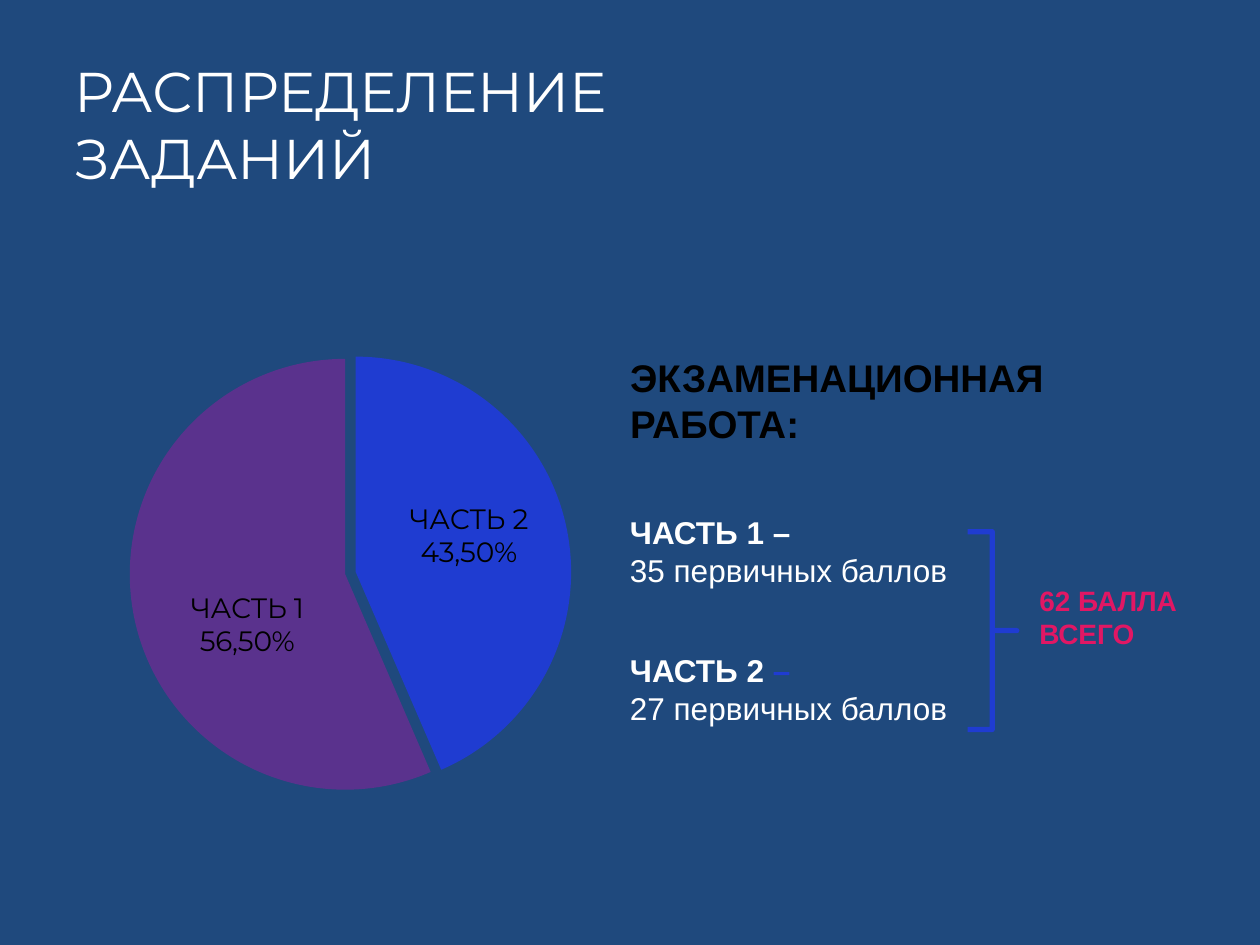
from pptx import Presentation
from pptx.chart.data import CategoryChartData
from pptx.dml.color import RGBColor
from pptx.enum.chart import XL_CHART_TYPE as ChartType, XL_LABEL_POSITION as LabelPosition
from pptx.enum.shapes import MSO_SHAPE as Shape
from pptx.enum.text import MSO_ANCHOR as Anchor, PP_ALIGN as Align
from pptx.oxml import parse_xml
from pptx.oxml.ns import nsdecls, qn
from pptx.util import Inches, Pt

COLORS = {
    "background": "1F497D",
    "white": "FFFFFF",
    "black": "000000",
    "blue": "1F3CD1",
    "purple": "5A328D",
    "pink": "E11764",
}


def color(name):
    return RGBColor.from_string(COLORS[name])


def manual_layout(**values):
    """Chart layout XML from fractions of the chart's size."""
    items = "".join(f'<c:{key} val="{value}"/>' for key, value in values.items())
    return parse_xml(
        f'<c:layout {nsdecls("c")}><c:manualLayout>{items}</c:manualLayout></c:layout>'
    )


class SlideBuilder:
    text_font = "Arial"
    display_font = "Montserrat"

    def __init__(self, deck):
        self.page = deck.slides.add_slide(deck.slide_layouts[5])
        fill = self.page.background.fill
        fill.solid()
        fill.fore_color.rgb = color("background")

    def style(self, span, size, fill, bold=False, font=None):
        span.font.name = font or self.text_font
        span.font.size = Pt(size)
        span.font.bold = bold
        span.font.color.rgb = color(fill)

    def frame(self, box, side_inset=0.0, wrap=True):
        frame = box.text_frame
        frame.word_wrap = wrap
        frame.vertical_anchor = Anchor.TOP
        frame.margin_left = frame.margin_right = Inches(side_inset)
        frame.margin_top = frame.margin_bottom = Inches(0.05)
        return frame

    def title(self, text, left, top, width, height):
        box = self.page.shapes.title
        box.left, box.top = Inches(left), Inches(top)
        box.width, box.height = Inches(width), Inches(height)
        frame = self.frame(box)
        frame.text = text
        for para in frame.paragraphs:
            para.alignment = Align.LEFT
            self.style(para.runs[0], 32, "white", font=self.display_font)

    def text(self, lines, left, top, width, height, size, side_inset=0.0, wrap=True):
        """Each line is a list of (text, colour, bold) spans."""
        box = self.page.shapes.add_textbox(
            Inches(left), Inches(top), Inches(width), Inches(height))
        frame = self.frame(box, side_inset, wrap)
        for number, spans in enumerate(lines):
            para = frame.add_paragraph() if number else frame.paragraphs[0]
            for words, fill, bold in spans:
                span = para.add_run()
                span.text = words
                self.style(span, size, fill, bold)

    def brace(self, left, top, width, height):
        brace = self.page.shapes.add_shape(
            Shape.RIGHT_BRACE, Inches(left), Inches(top), Inches(width), Inches(height))
        brace.shadow.inherit = False
        brace.adjustments[0] = 0
        brace.adjustments[1] = 0.5
        brace.fill.background()
        brace.line.color.rgb = color("blue")
        brace.line.width = Pt(3)

    def pie(self, slices, left, top, width, height, unused=0):
        """Each slice is (category, value, label, colour, explosion, label shift);
        unused is the number of empty data rows after them."""
        data = CategoryChartData(number_format="0.00%")
        data.categories = [part[0] for part in slices]
        data.add_series("Series 1", [part[1] for part in slices] + [None] * unused)
        chart = self.page.shapes.add_chart(
            ChartType.PIE, Inches(left), Inches(top), Inches(width), Inches(height), data
        ).chart
        chart.has_legend = chart.has_title = False
        chart.font.name = "Calibri"
        chart.font.size = Pt(18)
        chart.font.color.rgb = color("white")
        plot = chart.plots[0]
        plot.vary_by_categories = True
        series = plot.series[0]
        series.data_labels.show_value = True
        series.data_labels.show_category_name = True
        series.data_labels.number_format = "0.00%"
        series.data_labels.number_format_is_linked = False

        for number, (_, _, label, fill, _, _) in enumerate(slices):
            point = series.points[number]
            point.format.fill.solid()
            point.format.fill.fore_color.rgb = color(fill)
            point.format.line.fill.background()
            frame = point.data_label.text_frame
            frame.text = label
            for para in frame.paragraphs:
                self.style(para.runs[0], 16, "black", font=self.display_font)
            point.data_label.position = LabelPosition.CENTER

        # Pulled-out slices, label shifts and the plot's place need XML
        root = chart.element
        points, labels = root.iter(qn("c:dPt")), root.iter(qn("c:dLbl"))
        for part, point, label in zip(slices, list(points), list(labels)):
            point.find(qn("c:spPr")).addprevious(
                parse_xml(f'<c:explosion {nsdecls("c")} val="{part[4]}"/>'))
            shift_x, shift_y = part[5]
            label.find(qn("c:idx")).addnext(manual_layout(x=shift_x, y=shift_y))
            label.find(qn("c:showCatName")).set("val", "1")
        area = next(root.iter(qn("c:plotArea")))
        for old in area.findall(qn("c:layout")):
            area.remove(old)
        area.insert(0, manual_layout(
            layoutTarget="inner", xMode="edge", yMode="edge",
            x=0.2, y=0.2, w=0.57, h=0.61))


def main():
    deck = Presentation()
    deck.slide_width, deck.slide_height = Inches(10), Inches(7.5)
    slide = SlideBuilder(deck)

    # Share of each part
    slide.pie([
        ("Кв. 1", 0.435, "ЧАСТЬ 2\n43,50%", "blue", 5, (0.01, -0.02)),
        ("Кв. 2", 0.565, "ЧАСТЬ 1\n56,50%", "purple", 0, (0.01, 0.04)),
    ], -0.17, 1.66, 6, 5.74, unused=2)

    # Points for each part
    parts = [("ЧАСТЬ 1 ", "white", "35 первичных баллов"),
             ("ЧАСТЬ 2 ", "blue", "27 первичных баллов")]
    for number, (name, dash_color, points) in enumerate(parts):
        slide.text([[(name, "white", True), ("–", dash_color, True)],
                    [(points, "white", False)]],
                   5, 4.02 + 1.1 * number, 2.54, 0.71, 18, wrap=False)

    # Total
    slide.brace(7.68, 4.22, 0.39, 1.57)
    slide.text([[("62 БАЛЛА", "pink", True)], [("ВСЕГО", "pink", True)]],
               8.15, 4.58, 1.42, 0.64, 16, side_inset=0.1)

    # Headings
    slide.text([[("ЭКЗАМЕНАЦИОННАЯ РАБОТА:", "black", True)]], 5, 2.76, 3.91, 0.84, 22)
    slide.title("РАСПРЕДЕЛЕНИЕ\nЗАДАНИЙ", 0.59, 0.4, 8.82, 1.18)

    deck.save("out.pptx")


if __name__ == "__main__":
    main()
